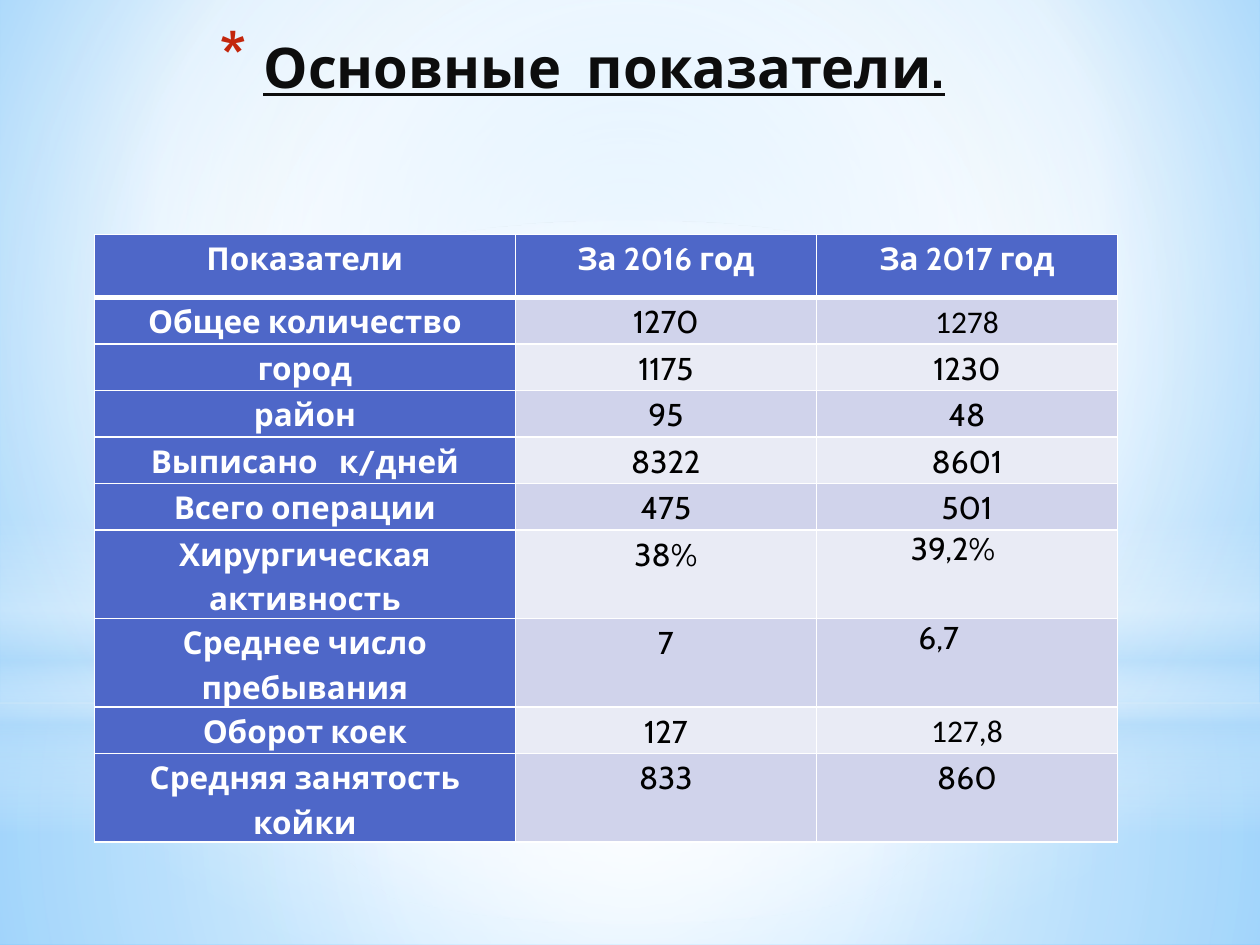
from lxml.etree import SubElement
from pptx import Presentation
from pptx.dml.color import RGBColor
from pptx.enum.shapes import MSO_SHAPE as Preset
from pptx.enum.text import MSO_ANCHOR as Anchor, MSO_AUTO_SIZE as AutoSize, PP_ALIGN as Align
from pptx.oxml.ns import qn
from pptx.util import Inches, Pt

COLORS = {
    "sky": "9ED5FF", "deep_sky": "5BB9FF", "haze": "B4DCFA", "white": "FFFFFF",
    "ink": "0D0D0D", "black": "000000", "bullet": "C3260C",
    "head": "4E67C8", "band_dark": "D0D3EB", "band_light": "E9EBF5",
}
CENTER = (50, 50, 50, 50)
COLUMN_WIDTHS = (3.34, 2.39, 2.39)
ROW_HEIGHTS = (0.5, 0.37, 0.37, 0.37, 0.37, 0.37, 0.4, 0.47, 0.37, 0.37)
ROWS = (
    ("Показатели", "За 2016 год", "За 2017 год"),
    ("Общее количество", "1270", "1278"),
    ("город", "1175", "1230"),
    ("район", "95", "48"),
    ("Выписано   к/дней", "8322", "8601"),
    ("Всего операции", "475", "501"),
    ("Хирургическая активность", "38%", "39,2%"),
    ("Среднее число пребывания", "7", "6,7"),
    ("Оборот коек", "127", "127,8"),
    ("Средняя занятость койки", "833", "860"),
)
CALIBRI_VALUES = ("1278", "127,8")
INDENTED_VALUES = {"39,2%": 0.68, "6,7": 0.74}


def rgb(name):
    return RGBColor.from_string(COLORS[name])


def add_xml(parent, tag, **attributes):
    return SubElement(parent, qn(tag), {key: str(value) for key, value in attributes.items()})


def set_gradient(fill, element, stops, focus=None):
    fill.gradient()
    gradient = element.find(".//" + qn("a:gradFill"))
    for child in list(gradient):
        gradient.remove(child)
    stop_list = add_xml(gradient, "a:gsLst")
    for position, name, opacity in stops:
        stop = add_xml(stop_list, "a:gs", pos=position * 1000)
        color = add_xml(stop, "a:srgbClr", val=COLORS[name])
        if opacity < 100:
            add_xml(color, "a:alpha", val=opacity * 1000)
    if focus:
        circle = add_xml(gradient, "a:path", path="circle")
        sides = {side: value * 1000 for side, value in zip("ltrb", focus)}
        add_xml(circle, "a:fillToRect", **sides)
    else:
        add_xml(gradient, "a:lin", ang=5400000, scaled=0)


def add_glow(slide, preset, top, height, stops, focus=CENTER):
    shape = slide.shapes.add_shape(preset, 0, Inches(top), Inches(10), Inches(height))
    shape.shadow.inherit = False
    shape.line.fill.background()
    set_gradient(shape.fill, shape._element, stops, focus)


def add_backdrop(slide):
    set_gradient(slide.background.fill, slide._element,
                 [(0, "sky", 100), (60, "white", 100), (100, "deep_sky", 100)],
                 (20, 10, 20, 60))
    add_glow(slide, Preset.RECTANGLE, 5.58, 1.92,
             [(0, "white", 91), (37, "white", 76), (100, "haze", 79)])
    add_glow(slide, Preset.RECTANGLE, 0, 5.58,
             [(0, "white", 89), (48, "white", 62), (100, "haze", 79)])
    add_glow(slide, Preset.RECTANGLE, 4.12, 2.5,
             [(0, "white", 0), (29, "white", 30), (45, "haze", 40),
              (55, "white", 26), (65, "haze", 60), (100, "white", 0)], None)
    add_glow(slide, Preset.OVAL, 1.75, 5.58, [(0, "white", 100), (56, "white", 0)])


def place_title(slide, left, top, width, height):
    title = slide.shapes.title
    slide.shapes._spTree.append(title._element)
    title.left, title.top = Inches(left), Inches(top)
    title.width, title.height = Inches(width), Inches(height)
    frame = title.text_frame
    frame.text = "Основные  показатели."
    frame.auto_size = AutoSize.NONE
    frame.vertical_anchor = Anchor.TOP
    paragraph = frame.paragraphs[0]
    paragraph.alignment = Align.CENTER
    font = paragraph.font
    font.name, font.size = "Cabin", Pt(32)
    font.bold = font.underline = True
    font.color.rgb = rgb("ink")
    properties = paragraph._p.get_or_add_pPr()
    properties.set("marL", str(Inches(0.35)))
    properties.set("indent", str(Inches(-0.35)))
    bullet_color = add_xml(properties, "a:buClr")
    add_xml(bullet_color, "a:srgbClr", val=COLORS["bullet"])
    bullet_parts = [bullet_color,
                    add_xml(properties, "a:buSzPct", val=128000),
                    add_xml(properties, "a:buChar", char="*")]
    for position, part in enumerate(bullet_parts):
        properties.insert(position, part)


def set_borders(cell, bottom_width):
    properties = cell._tc.get_or_add_tcPr()
    widths = {"a:lnL": 1, "a:lnR": 1, "a:lnT": 1, "a:lnB": bottom_width}
    for position, (tag, width) in enumerate(widths.items()):
        line = add_xml(properties, tag, w=Pt(width))
        add_xml(add_xml(line, "a:solidFill"), "a:srgbClr", val=COLORS["white"])
        properties.insert(position, line)


def fill_cell(cell, text, row, column):
    is_head = row == 0 or column == 0
    cell.margin_left = cell.margin_right = Inches(0.07)
    cell.margin_top = cell.margin_bottom = 0
    cell.fill.solid()
    cell.fill.fore_color.rgb = rgb("head" if is_head else "band_dark" if row % 2 else "band_light")
    set_borders(cell, 3 if row == 0 else 1)
    cell.text = text
    paragraph = cell.text_frame.paragraphs[0]
    if text in INDENTED_VALUES:
        paragraph.alignment = Align.LEFT
        paragraph._p.get_or_add_pPr().set("marL", str(Inches(INDENTED_VALUES[text])))
    else:
        paragraph.alignment = Align.CENTER
        paragraph.line_spacing = 1.15
    font = paragraph.font
    font.name = "Calibri" if text in CALIBRI_VALUES else "Cabin"
    font.size, font.bold = Pt(18), is_head
    font.color.rgb = rgb("white" if is_head else "black")


def add_indicators(slide, left, top):
    table = slide.shapes.add_table(
        len(ROWS), len(COLUMN_WIDTHS), Inches(left), Inches(top),
        Inches(sum(COLUMN_WIDTHS)), Inches(sum(ROW_HEIGHTS))).table
    for column, width in zip(table.columns, COLUMN_WIDTHS):
        column.width = Inches(width)
    for table_row, height in zip(table.rows, ROW_HEIGHTS):
        table_row.height = Inches(height)
    for row, texts in enumerate(ROWS):
        for column, text in enumerate(texts):
            fill_cell(table.cell(row, column), text, row, column)


def main():
    presentation = Presentation()
    presentation.slide_width, presentation.slide_height = Inches(10), Inches(7.5)
    slide = presentation.slides.add_slide(presentation.slide_layouts[5])
    add_backdrop(slide)
    place_title(slide, 1.06, 0.21, 7.12, 1.25)
    add_indicators(slide, 0.75, 1.86)
    presentation.save("out.pptx")


if __name__ == "__main__":
    main()
